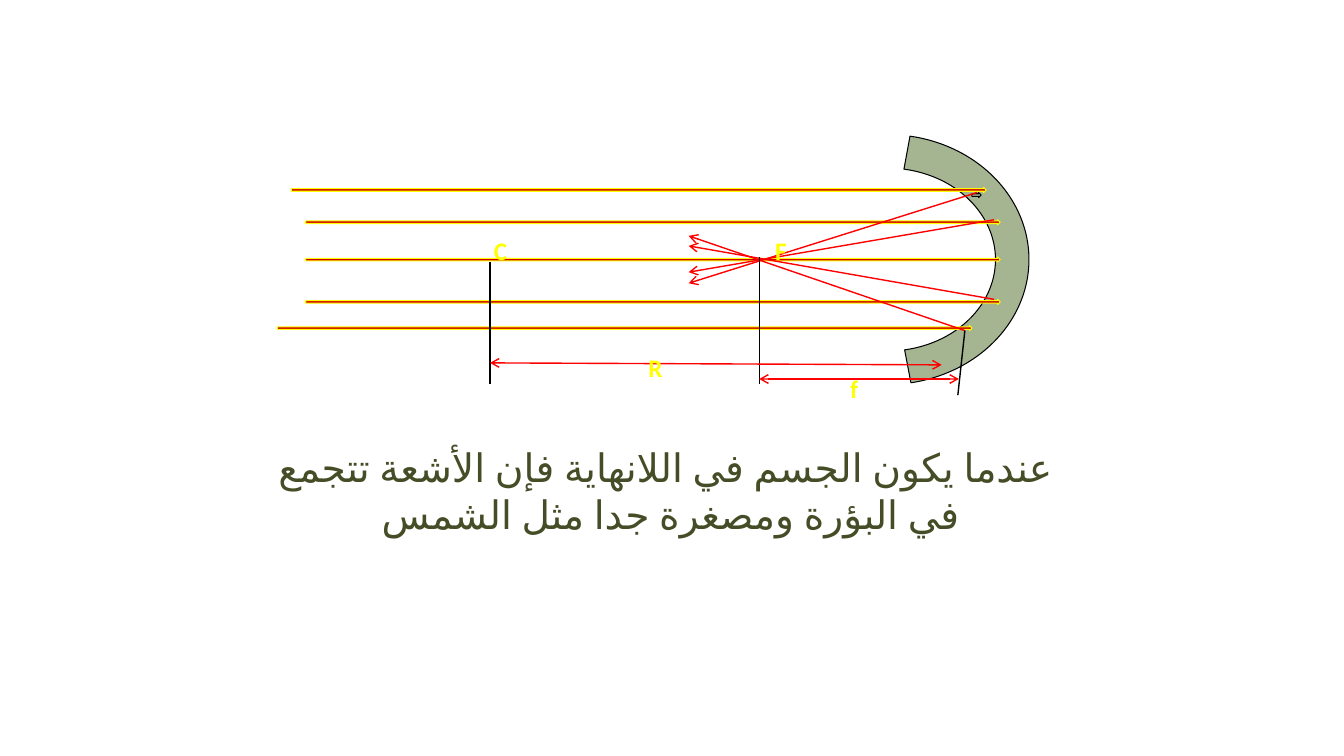
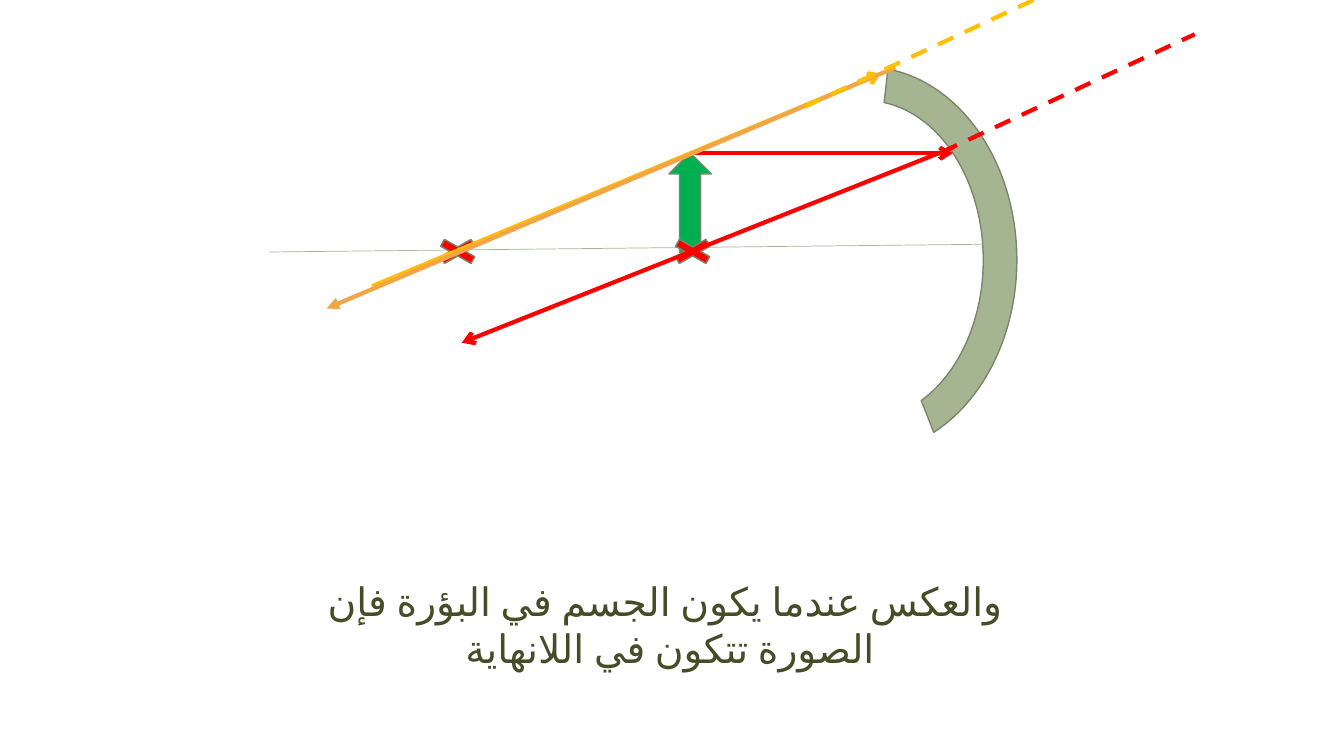
from dataclasses import dataclass

from lxml.etree import SubElement
from pptx import Presentation
from pptx.dml.color import RGBColor
from pptx.enum.dml import MSO_LINE
from pptx.enum.lang import MSO_LANGUAGE_ID
from pptx.enum.shapes import MSO_CONNECTOR, MSO_SHAPE
from pptx.enum.text import MSO_AUTO_SIZE, PP_ALIGN
from pptx.oxml.ns import qn
from pptx.slide import Slide
from pptx.util import Emu, Pt

PX = 9144  # 100 px to the inch
FONT = "Calibri"

OLIVE = RGBColor(0x44, 0x4D, 0x26)
SAGE = RGBColor(0xA5, 0xB5, 0x92)
SAGE_EDGE = RGBColor(0x7A, 0x86, 0x6C)
BLACK = RGBColor(0x00, 0x00, 0x00)
RED = RGBColor(0xFF, 0x00, 0x00)
DARK_RED = RGBColor(0xCC, 0x00, 0x00)
YELLOW = RGBColor(0xFF, 0xFF, 0x00)
AMBER = RGBColor(0xFF, 0xC0, 0x00)
ORANGE = RGBColor(0xF3, 0xA4, 0x47)
GREEN = RGBColor(0x00, 0xB0, 0x50)


@dataclass(frozen=True)
class Box:
    left: int
    top: int
    width: int
    height: int

    def emu(self) -> list[Emu]:
        return [Emu(n * PX) for n in (self.left, self.top, self.width, self.height)]


@dataclass(frozen=True)
class Line:
    start: tuple[int, int]
    end: tuple[int, int]
    color: RGBColor = RED
    weight: float = 1
    head: str = ""
    tail: str = ""
    dashed: bool = False


@dataclass(frozen=True)
class Label:
    text: str
    box: Box
    wrap: bool = False


def add_text(slide: Slide, text: str, box: Box, *, size: int, color: RGBColor,
             align: PP_ALIGN, bold: bool = False, wrap: bool = True) -> None:
    frame = slide.shapes.add_textbox(*box.emu()).text_frame
    frame.word_wrap = wrap
    frame.auto_size = MSO_AUTO_SIZE.SHAPE_TO_FIT_TEXT
    paragraph = frame.paragraphs[0]
    paragraph.alignment = align
    paragraph._p.get_or_add_pPr().set("rtl", "1")
    run = paragraph.add_run()
    run.text = text
    run.font.size = Pt(size)
    run.font.bold = bold
    run.font.color.rgb = color
    run.font.name = FONT
    run.font.language_id = MSO_LANGUAGE_ID.ARABIC


def add_caption(slide: Slide, text: str, box: Box) -> None:
    add_text(slide, text, box, size=28, color=OLIVE, align=PP_ALIGN.CENTER)


def add_figure(slide: Slide, kind: MSO_SHAPE, box: Box, fill: RGBColor,
               edge: RGBColor = SAGE_EDGE, weight: float = 1, rotation: int = 0,
               adjustments: tuple[float, ...] = ()) -> None:
    shape = slide.shapes.add_shape(kind, *box.emu())
    shape.shadow.inherit = False
    shape.rotation = rotation
    shape.fill.solid()
    shape.fill.fore_color.rgb = fill
    shape.line.color.rgb = edge
    shape.line.width = Pt(weight)
    for index, value in enumerate(adjustments):
        shape.adjustments[index] = value


def add_line(slide: Slide, line: Line) -> None:
    ends = [Emu(n * PX) for n in (*line.start, *line.end)]
    connector = slide.shapes.add_connector(MSO_CONNECTOR.STRAIGHT, *ends)
    connector.line.color.rgb = line.color
    connector.line.width = Pt(line.weight)
    if line.dashed:
        connector.line.dash_style = MSO_LINE.DASH
    outline = connector.line._get_or_add_ln()
    for tag, arrowhead in (("a:headEnd", line.head), ("a:tailEnd", line.tail)):
        if arrowhead:
            SubElement(outline, qn(tag), type=arrowhead)
    SubElement(connector._element.spPr, qn("a:effectLst"))


def build_object_at_infinity(slide: Slide) -> None:
    add_caption(slide, " عندما يكون الجسم في اللانهاية فإن الأشعة تتجمع في البؤرة ومصغرة جدا مثل الشمس",
                Box(245, 435, 840, 104))

    # Concave mirror
    add_figure(slide, MSO_SHAPE.BLOCK_ARC, Box(756, 117, 248, 281), SAGE, BLACK, 0.75,
               rotation=90, adjustments=(114.25, 209.497, 0.134))

    # Parallel incoming rays
    for left, top in ((289, 186), (303, 218), (303, 255), (303, 297), (275, 323)):
        add_figure(slide, MSO_SHAPE.RIGHT_ARROW, Box(left, top, 689, 5), DARK_RED, YELLOW, 0.75)
    add_figure(slide, MSO_SHAPE.RIGHT_ARROW, Box(964, 191, 9, 5), SAGE, BLACK, 0.75)

    # Reflected rays through the focus
    for start, end_y in (((969, 191), 281), ((986, 218), 270), ((986, 297), 244), ((957, 328), 234)):
        add_line(slide, Line(start, (683, end_y), tail="arrow"))

    # Reference marks at focus, centre and mirror
    for start, end in (((753, 255), (753, 381)), ((486, 260), (486, 381)), ((957, 328), (950, 392))):
        add_line(slide, Line(start, end, BLACK))

    # Radius and focal length
    for start, end in (((486, 360), (934, 362)), ((753, 376), (951, 376))):
        add_line(slide, Line(start, end, head="arrow", tail="arrow"))

    labels = (
        Label("C", Box(479, 229, 34, 40)),
        Label("f", Box(833, 365, 28, 40)),
        Label("R", Box(633, 345, 34, 40)),
        Label("F", Box(725, 229, 65, 40), wrap=True),
    )
    for label in labels:
        add_text(slide, label.text, label.box, size=18, color=YELLOW,
                 align=PP_ALIGN.RIGHT, bold=True, wrap=label.wrap)


def build_object_at_focus(slide: Slide) -> None:
    # Concave mirror and its axis
    add_figure(slide, MSO_SHAPE.BLOCK_ARC, Box(667, 108, 383, 300), SAGE,
               rotation=90, adjustments=(112.011, 203.055, 0.111))
    add_line(slide, Line((1008, 242), (267, 250), SAGE, 0.5))

    # Object, with focus and centre marks
    add_figure(slide, MSO_SHAPE.RIGHT_ARROW, Box(635, 180, 99, 42), GREEN, rotation=270)
    for left in (658, 425):
        add_figure(slide, MSO_SHAPE.MATH_MULTIPLY, Box(left, 233, 58, 33), RED)

    # Incident rays, reflected rays and their dashed extensions
    rays = (
        Line((685, 152), (945, 152), RED, 3, tail="arrow"),
        Line((369, 284), (874, 73), AMBER, 3, tail="arrow"),
        Line((946, 146), (458, 340), RED, 3, tail="arrow"),
        Line((934, 151), (1185, 34), RED, 3, dashed=True),
        Line((888, 67), (324, 306), ORANGE, 3, tail="triangle"),
        Line((798, 106), (1025, 0), AMBER, 3, dashed=True),
    )
    for ray in rays:
        add_line(slide, ray)

    add_caption(slide, " والعكس عندما يكون الجسم في البؤرة فإن الصورة تتكون في اللانهاية",
                Box(260, 568, 809, 104))


def main() -> None:
    deck = Presentation()
    deck.slide_width, deck.slide_height = Emu(1333 * PX), Emu(750 * PX)
    blank = deck.slide_layouts[6]
    for build in (build_object_at_infinity, build_object_at_focus):
        build(deck.slides.add_slide(blank))
    deck.save("out.pptx")


if __name__ == "__main__":
    main()
